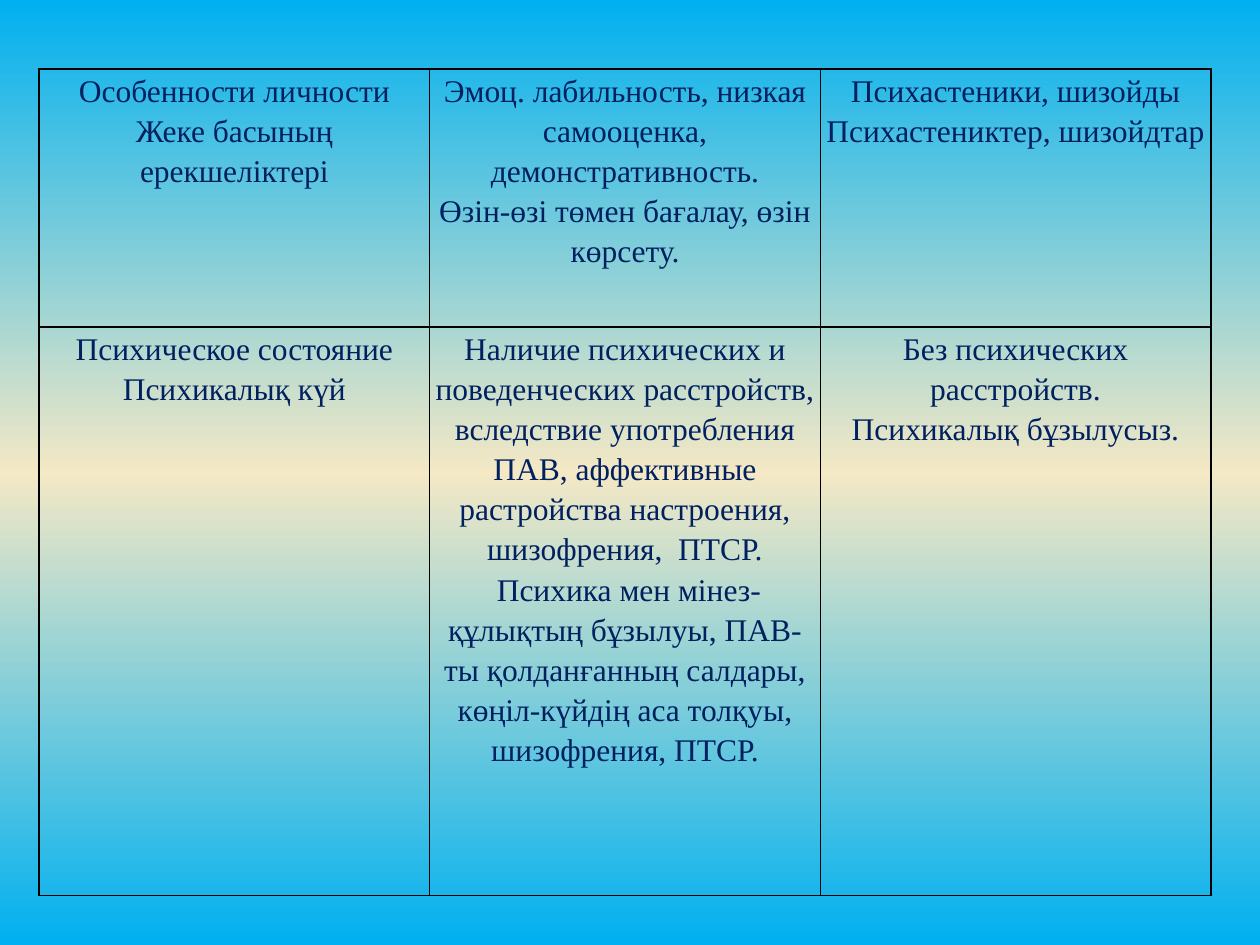
from copy import deepcopy
from dataclasses import dataclass

from lxml.etree import SubElement
from pptx import Presentation
from pptx.dml.color import RGBColor
from pptx.enum.text import PP_ALIGN as Align
from pptx.oxml.ns import qn
from pptx.util import Cm, Pt


@dataclass(frozen=True)
class Theme:
    sky: str = "00B0F0"
    sand: str = "F4E8C5"
    ink: str = "002060"
    border: str = "000000"
    font: str = "Times New Roman"
    text_size: float = 18
    border_width: float = 1
    line_spacing: float = 1.15


THEME = Theme()

# Each cell holds a Russian paragraph and its Kazakh counterpart
TRAITS = [
    [
        ("Особенности личности", "Жеке басының ерекшеліктері"),
        ("Эмоц. лабильность, низкая самооценка, демонстративность.",
         "Өзін-өзі төмен бағалау, өзін көрсету."),
        ("Психастеники, шизойды", "Психастениктер, шизойдтар"),
    ],
    [
        ("Психическое состояние", "Психикалық күй"),
        ("Наличие психических и поведенческих расстройств, вследствие "
         "употребления ПАВ, аффективные растройства настроения, "
         "шизофрения,  ПТСР.",
         " Психика мен мінез- құлықтың бұзылуы, ПАВ-ты қолданғанның "
         "салдары, көңіл-күйдің аса толқуы, шизофрения, ПТСР."),
        ("Без психических расстройств.", "Психикалық бұзылусыз."),
    ],
]
ROW_SHARES = (0.3125, 0.6875)


def paint_background(slide):
    """Vertical gradient: sky, sand in the middle, sky."""
    fill = slide.background.fill
    fill.gradient()
    fill.gradient_angle = 90
    for stop in fill.gradient_stops:
        stop.color.rgb = RGBColor.from_string(THEME.sky)
    stop_list = next(slide.element.iter(qn("a:gsLst")))
    middle = deepcopy(stop_list[0])
    middle.set("pos", "50000")
    middle.find(qn("a:srgbClr")).set("val", THEME.sand)
    stop_list.insert(1, middle)


def draw_borders(cell):
    properties = cell._tc.get_or_add_tcPr()
    for index, side in enumerate(("lnL", "lnR", "lnT", "lnB")):
        line = SubElement(properties, qn(f"a:{side}"), w=str(Pt(THEME.border_width)))
        solid = SubElement(line, qn("a:solidFill"))
        SubElement(solid, qn("a:srgbClr"), val=THEME.border)
        # Borders come before the fill in the cell properties
        properties.insert(index, line)


def write_cell(cell, texts):
    cell.fill.background()
    draw_borders(cell)
    cell.margin_left = cell.margin_right = Cm(0.11)
    cell.margin_top = cell.margin_bottom = 0
    frame = cell.text_frame
    for index, text in enumerate(texts):
        paragraph = frame.add_paragraph() if index else frame.paragraphs[0]
        paragraph.alignment = Align.CENTER
        paragraph.line_spacing = THEME.line_spacing
        run = paragraph.add_run()
        run.text = text
        run.font.name = THEME.font
        run.font.size = Pt(THEME.text_size)
        run.font.color.rgb = RGBColor.from_string(THEME.ink)


def add_traits_table(slide, left, top, width, height):
    column_count = len(TRAITS[0])
    table = slide.shapes.add_table(
        len(TRAITS), column_count, left, top, width, height).table
    table.first_row = table.horz_banding = False
    for column in table.columns:
        column.width = int(width / column_count)
    for row, share, entries in zip(table.rows, ROW_SHARES, TRAITS):
        row.height = int(height * share)
        for cell, texts in zip(row.cells, entries):
            write_cell(cell, texts)


def main():
    deck = Presentation()
    deck.slide_width, deck.slide_height = Cm(25.4), Cm(19.05)
    slide = deck.slides.add_slide(deck.slide_layouts[6])
    paint_background(slide)
    add_traits_table(slide, Cm(0.79), Cm(1.39), Cm(23.62), Cm(16.66))
    deck.save("out.pptx")


if __name__ == "__main__":
    main()
